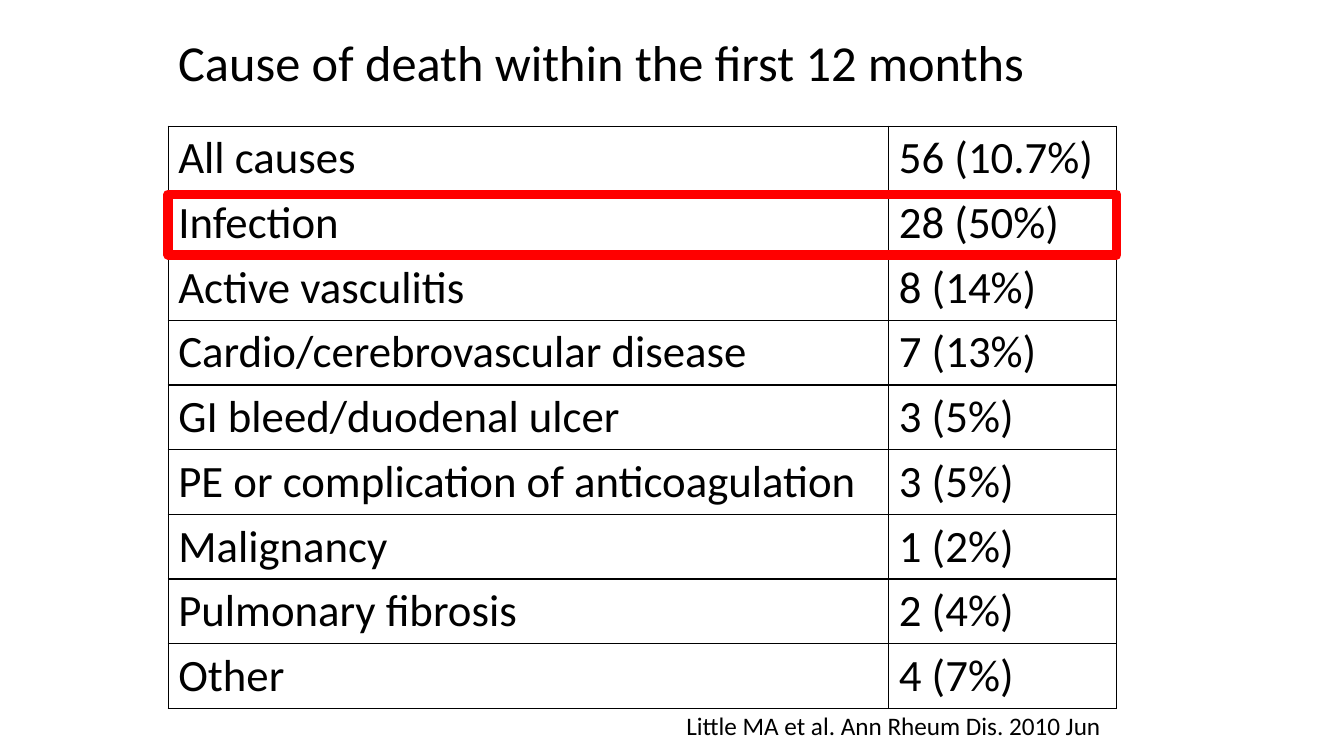
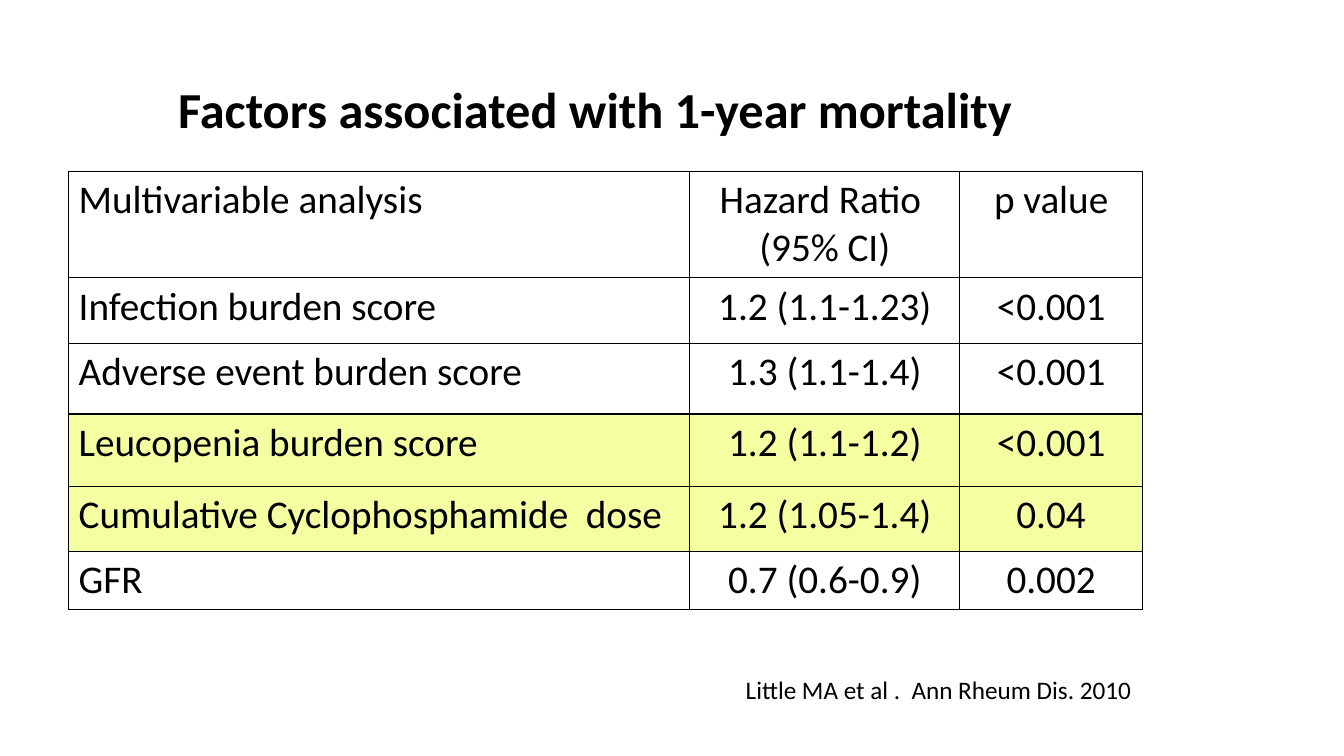
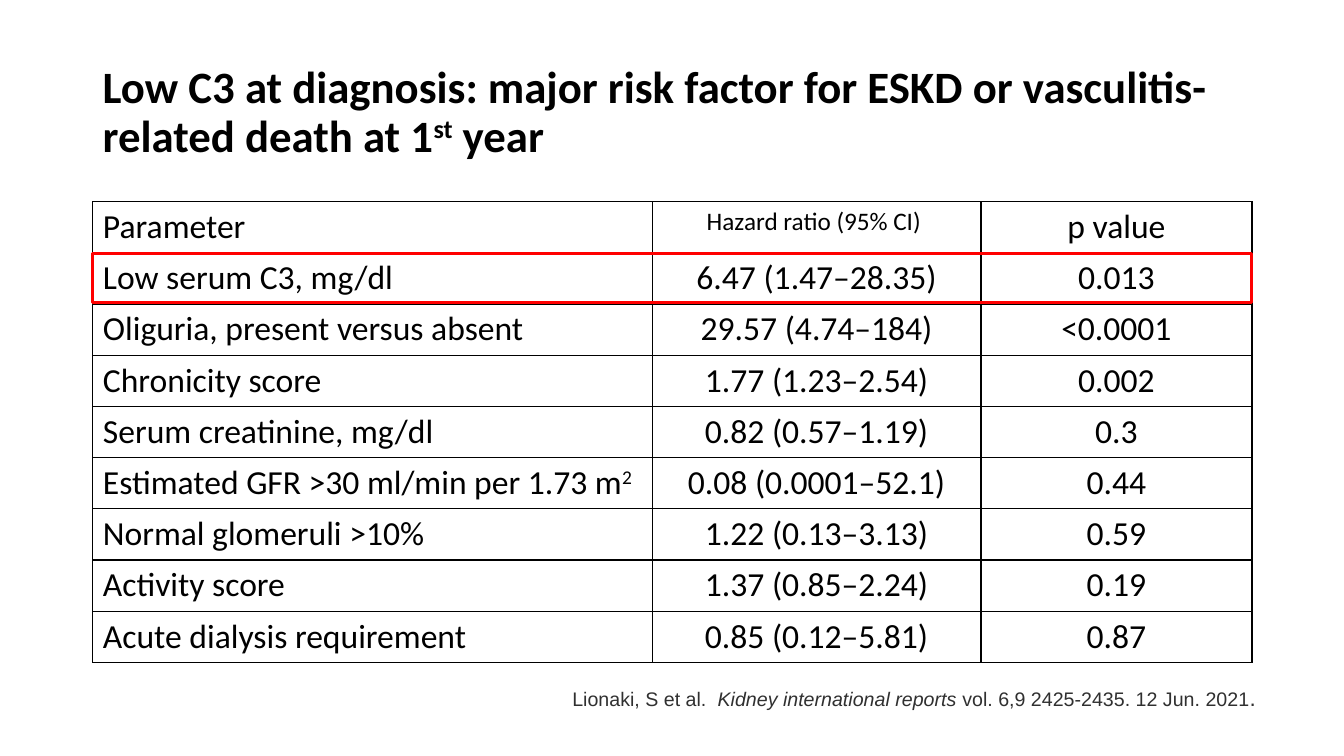
from dataclasses import dataclass

import pptx
import pptx.dml.color
import pptx.enum.shapes
import pptx.enum.text
import pptx.oxml
import pptx.oxml.ns
import pptx.util
from pptx.util import Cm

BLACK = "000000"
WHITE = "FFFFFF"
RED = "FF0000"
YELLOW = "F3FFA1"
GREY = "303030"
LEFT = pptx.enum.text.PP_ALIGN.LEFT
CENTER = pptx.enum.text.PP_ALIGN.CENTER
RIGHT = pptx.enum.text.PP_ALIGN.RIGHT


@dataclass(frozen=True)
class Box:
    """A rectangle in centimetres."""
    left: float
    top: float
    width: float
    height: float

    def lengths(self) -> tuple:
        return Cm(self.left), Cm(self.top), Cm(self.width), Cm(self.height)


@dataclass(frozen=True)
class Style:
    size: float
    bold: bool = False
    color: str = BLACK
    font: str = "Calibri"


@dataclass(frozen=True)
class Span:
    """A piece of a paragraph that may differ from the paragraph's style."""
    text: str
    size: float | None = None
    italic: bool = False
    superscript: bool = False


Content = str | tuple[Span, ...]


@dataclass(frozen=True)
class Caption:
    box: Box
    content: Content
    style: Style


@dataclass(frozen=True)
class Grid:
    left: float
    top: float
    columns: tuple[float, ...]
    heights: tuple[float, ...]
    size: float
    rows: tuple[tuple[Content, ...], ...]
    value_alignment: pptx.enum.text.PP_ALIGN = CENTER
    shaded_rows: tuple[int, ...] = ()


@dataclass(frozen=True)
class Highlight:
    box: Box
    line_width: float


@dataclass(frozen=True)
class Page:
    title: Caption
    grid: Grid
    citation: Caption
    highlight: Highlight | None = None


PAGES = (
    Page(
        Caption(Box(4.24, 0.15, 25.4, 3), "Cause of death within the first 12 months", Style(36)),
        Grid(4.24, 3.18, (18.16, 5.74), (1.63,) * 9, 32, (
            ("All causes", "56 (10.7%)"),
            ("Infection", "28 (50%)"),
            ("Active vasculitis", "8 (14%)"),
            ("Cardio/cerebrovascular disease", "7 (13%)"),
            ("GI bleed/duodenal ulcer", "3 (5%)"),
            ("PE or complication of anticoagulation", "3 (5%)"),
            ("Malignancy", "1 (2%)"),
            ("Pulmonary fibrosis", "2 (4%)"),
            ("Other", "4 (7%)"),
        ), value_alignment=LEFT),
        Caption(Box(5.92, 17.78, 22.07, 1.02), "Little MA et al. Ann Rheum Dis. 2010 Jun", Style(18)),
        Highlight(Box(4.24, 4.9, 23.9, 1.52), 7),
    ),
    Page(
        Caption(Box(4.24, 1.32, 25.4, 3), "Factors associated with 1-year mortality",
                Style(36, bold=True)),
        Grid(1.73, 4.32, (15.65, 6.81, 4.6), (2.68, 1.65, 1.78, 1.83, 1.63, 1.47), 28, (
            ("Multivariable analysis", "Hazard Ratio \n(95% CI)", "p value"),
            ("Infection burden score", "1.2 (1.1-1.23)", "<0.001"),
            ("Adverse event burden score", "1.3 (1.1-1.4)", "<0.001"),
            ("Leucopenia burden score", "1.2 (1.1-1.2)", "<0.001"),
            ("Cumulative Cyclophosphamide  dose", "1.2 (1.05-1.4)", "0.04"),
            ("GFR", "0.7 (0.6-0.9)", "0.002"),
        ), shaded_rows=(3, 4)),
        Caption(Box(6.81, 16.87, 21.95, 1.02), "Little MA et al .  Ann Rheum Dis. 2010", Style(18)),
    ),
    Page(
        Caption(Box(2.34, 1.02, 29.2, 3.68), (
            Span("Low C3 at diagnosis: major risk factor for ESKD or "
                 "vasculitis-related death at 1"),
            Span("st", superscript=True),
            Span(" year"),
        ), Style(32, bold=True)),
        Grid(2.34, 5.08, (14.1, 8.28, 6.83), (1.29,) * 9, 24, (
            ("Parameter", (Span("Hazard ratio (95% CI) ", size=18),), "p value"),
            ("Low serum C3, mg/dl", "6.47 (1.47–28.35)", "0.013"),
            ("Oliguria, present versus absent", "29.57 (4.74–184)", "<0.0001"),
            ("Chronicity score", "1.77 (1.23–2.54)", "0.002"),
            ("Serum creatinine, mg/dl", "0.82 (0.57–1.19)", "0.3"),
            ((Span("Estimated GFR >30 ml/min per 1.73 m"), Span("2", superscript=True)),
             "0.08 (0.0001–52.1)", "0.44"),
            ("Normal glomeruli >10%", "1.22 (0.13–3.13)", "0.59"),
            ("Activity score", "1.37 (0.85–2.24)", "0.19"),
            ("Acute dialysis requirement", "0.85 (0.12–5.81)", "0.87"),
        )),
        Caption(Box(10.82, 17.12, 21.08, 0.94), (
            Span("Lionaki, S et al.  "),
            Span("Kidney international reports", italic=True),
            Span(" vol. 6,9 2425-2435. 12 Jun. 2021"),
            Span(".", size=16),
        ), Style(14, color=GREY, font="Arial")),
        Highlight(Box(2.34, 6.38, 29.2, 1.24), 2.25),
    ),
)


def rgb(color: str) -> pptx.dml.color.RGBColor:
    return pptx.dml.color.RGBColor.from_string(color)


def write_text(text_frame, content: Content, style: Style, alignment) -> None:
    if isinstance(content, str):
        text_frame.text = content
    else:
        for span in content:
            run = text_frame.paragraphs[0].add_run()
            run.text = span.text
            run.font.italic = span.italic
            if span.size:
                run.font.size = pptx.util.Pt(span.size)
            if span.superscript:
                run._r.get_or_add_rPr().set("baseline", "30000")
    for paragraph in text_frame.paragraphs:
        paragraph.alignment = alignment
        for run in paragraph.runs:
            run.font.size = run.font.size or pptx.util.Pt(style.size)
            run.font.name = style.font
            run.font.bold = style.bold
            run.font.color.rgb = rgb(style.color)


def add_caption(slide, caption: Caption, alignment):
    text_frame = slide.shapes.add_textbox(*caption.box.lengths()).text_frame
    text_frame.word_wrap = True
    write_text(text_frame, caption.content, caption.style, alignment)
    return text_frame


def add_title(slide, title: Caption) -> None:
    text_frame = add_caption(slide, title, LEFT)
    text_frame.vertical_anchor = pptx.enum.text.MSO_ANCHOR.MIDDLE
    text_frame.paragraphs[0].line_spacing = 0.9


def add_borders(cell) -> None:
    """Give a cell black one-point borders on all four sides."""
    properties = cell._tc.get_or_add_tcPr()
    for side in ("lnL", "lnR", "lnT", "lnB"):
        properties.append(pptx.oxml.parse_xml(
            f'<a:{side} {pptx.oxml.ns.nsdecls("a")} w="12700"><a:solidFill>'
            f'<a:srgbClr val="{BLACK}"/></a:solidFill></a:{side}>'))


def add_grid(slide, grid: Grid) -> None:
    box = Box(grid.left, grid.top, sum(grid.columns), sum(grid.heights))
    table = slide.shapes.add_table(
        len(grid.rows), len(grid.columns), *box.lengths()).table
    table.first_row = False
    table.horz_banding = False
    for column, width in zip(table.columns, grid.columns):
        column.width = Cm(width)
    for row, height in zip(table.rows, grid.heights):
        row.height = Cm(height)
    for row_index, contents in enumerate(grid.rows):
        for column_index, content in enumerate(contents):
            cell = table.cell(row_index, column_index)
            alignment = grid.value_alignment if column_index else LEFT
            write_text(cell.text_frame, content, Style(grid.size), alignment)
            add_borders(cell)
            cell.fill.solid()
            cell.fill.fore_color.rgb = rgb(YELLOW if row_index in grid.shaded_rows else WHITE)


def add_highlight(slide, highlight: Highlight) -> None:
    shape = slide.shapes.add_shape(
        pptx.enum.shapes.MSO_SHAPE.RECTANGLE, *highlight.box.lengths())
    shape.shadow.inherit = False
    shape.fill.background()
    shape.line.color.rgb = rgb(RED)
    shape.line.width = pptx.util.Pt(highlight.line_width)


def main() -> None:
    presentation = pptx.Presentation()
    presentation.slide_width = Cm(33.87)
    presentation.slide_height = Cm(19.05)
    for page in PAGES:
        slide = presentation.slides.add_slide(presentation.slide_layouts[6])
        add_title(slide, page.title)
        add_grid(slide, page.grid)
        add_caption(slide, page.citation, RIGHT)
        if page.highlight:
            add_highlight(slide, page.highlight)
    presentation.save("out.pptx")


if __name__ == "__main__":
    main()
